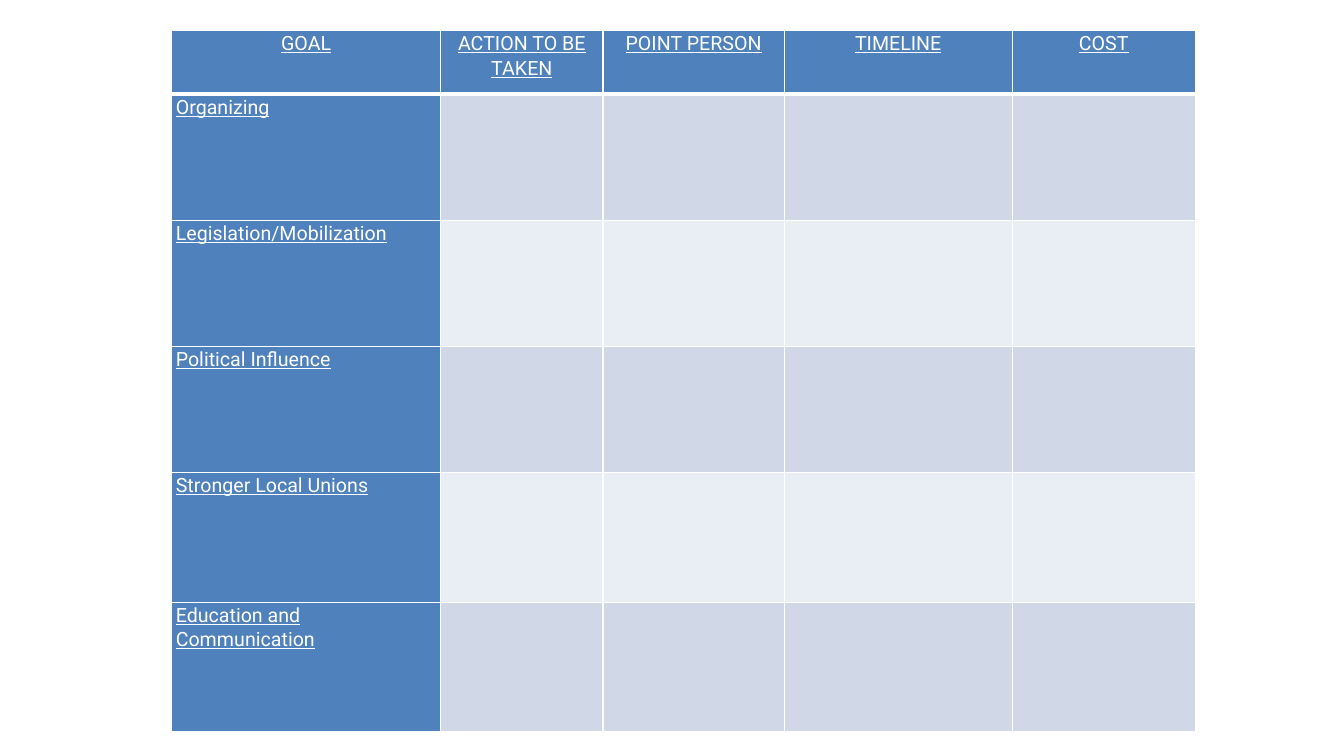
from lxml import etree
from pptx import Presentation
from pptx.dml.color import RGBColor
from pptx.enum import text
from pptx.oxml import ns
from pptx.util import Pt

COLORS = {"header": "4F81BD", "odd": "D0D8E8", "even": "E9EDF4", "line": "FFFFFF", "label": "FFFFFF"}
HEADINGS = ["GOAL", "ACTION TO BE TAKEN", "POINT PERSON", "TIMELINE", "COST"]
GOALS = ["Organizing", "Legislation/Mobilization", "Political Influence",
         "Stronger Local Unions", "Education and Communication"]
COLUMN_WIDTHS = [192.2, 115.9, 129.6, 162.7, 131]
ROW_HEIGHTS = [45.4, 90, 90, 90, 92.9, 92.2]


def style_cell(cell, fill, bottom, top):
    """Draw the cell's borders, fill and margins."""
    properties = cell._tc.get_or_add_tcPr()
    for side, width in (("L", 1), ("R", 1), ("T", top), ("B", bottom)):
        border = etree.SubElement(properties, ns.qn(f"a:ln{side}"), w=str(Pt(width)))
        paint = etree.SubElement(border, ns.qn("a:solidFill"))
        etree.SubElement(paint, ns.qn("a:srgbClr"), val=COLORS["line"])
    cell.fill.solid()
    cell.fill.fore_color.rgb = RGBColor.from_string(COLORS[fill])
    cell.margin_left = cell.margin_right = Pt(3)
    cell.margin_top = cell.margin_bottom = Pt(0)


def write_label(cell, label, alignment):
    """Write an underlined heading or goal in a cell."""
    cell.text = label
    paragraph = cell.text_frame.paragraphs[0]
    paragraph.alignment = alignment
    paragraph.line_spacing = 1.07
    font = paragraph.font
    font.name = "Roboto"
    font.size = Pt(14)
    font.bold = False
    font.underline = True
    font.color.rgb = RGBColor.from_string(COLORS["label"])


def add_plan(slide, left, top):
    """Add the action plan table with its top left corner at the given point."""
    plan = slide.shapes.add_table(
        len(ROW_HEIGHTS), len(COLUMN_WIDTHS), Pt(left), Pt(top),
        Pt(sum(COLUMN_WIDTHS)), Pt(sum(ROW_HEIGHTS))).table
    plan.first_col = True
    for column, width in zip(plan.columns, COLUMN_WIDTHS):
        column.width = Pt(width)
    for r, height in enumerate(ROW_HEIGHTS):
        plan.rows[r].height = Pt(height)
        band = "odd" if r % 2 else "even"
        for c, cell in enumerate(plan.rows[r].cells):
            fill = "header" if r == 0 or c == 0 else band
            style_cell(cell, fill, bottom=3 if r == 0 else 1, top=3 if r == 1 else 1)
    for c, heading in enumerate(HEADINGS):
        write_label(plan.cell(0, c), heading, text.PP_ALIGN.CENTER)
    for r, goal in enumerate(GOALS, start=1):
        write_label(plan.cell(r, 0), goal, text.PP_ALIGN.LEFT)


def main():
    """Build and save the presentation."""
    deck = Presentation()
    deck.slide_width, deck.slide_height = Pt(960), Pt(540)
    slide = deck.slides.add_slide(deck.slide_layouts[6])
    add_plan(slide, 122.6, 21.9)
    deck.save("out.pptx")


if __name__ == "__main__":
    main()
